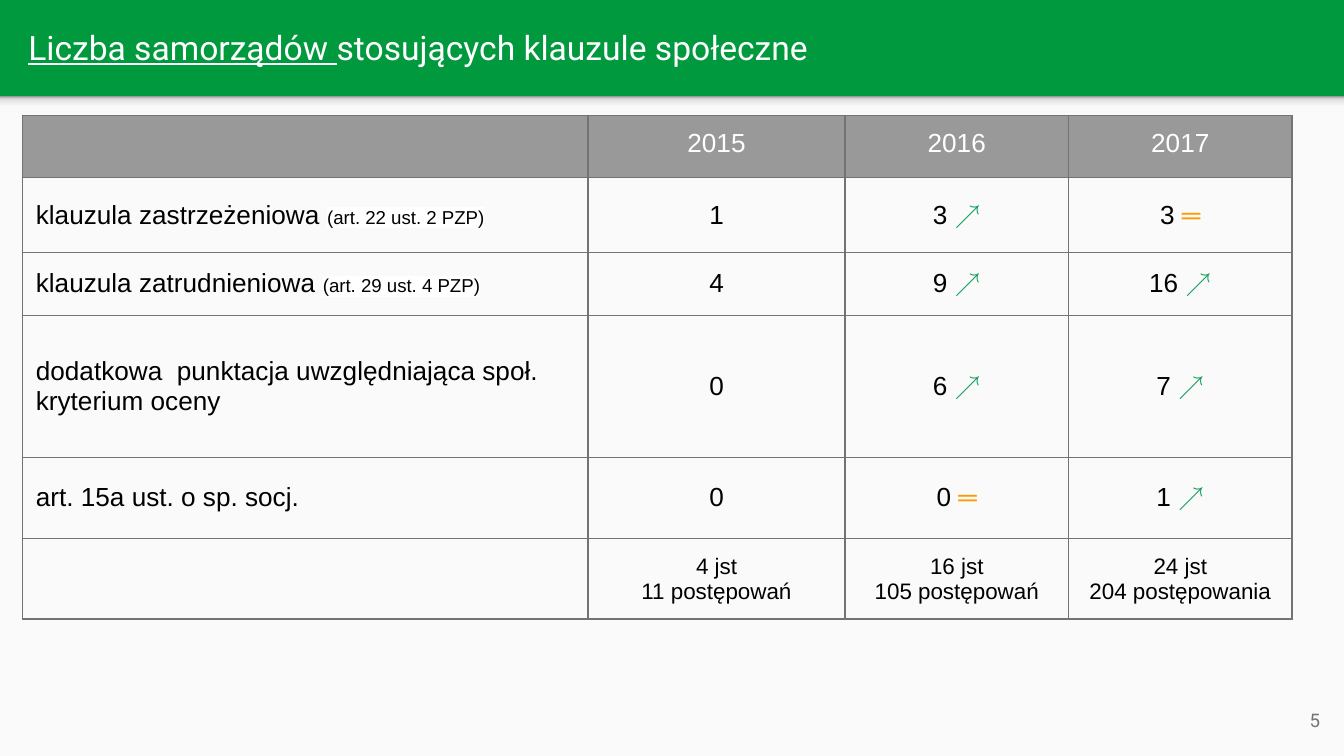
from copy import deepcopy
from dataclasses import dataclass

from lxml.etree import SubElement
from pptx import Presentation
from pptx.dml.color import RGBColor
from pptx.enum.shapes import MSO_SHAPE
from pptx.enum.text import MSO_ANCHOR, PP_ALIGN
from pptx.oxml.ns import qn
from pptx.util import Pt


@dataclass(frozen=True)
class Theme:
    green: str = "00993E"
    paper: str = "FAFAFA"
    white: str = "FFFFFF"
    black: str = "000000"
    gray: str = "737373"
    head: str = "999999"
    rise: str = "0F9D58"
    same: str = "FF9900"
    shade: tuple = ((0, "F9F9F9"), (36, "F9F9F9"), (80, "DEDEDE"), (100, "999999"))
    title: int = 18
    body: int = 14
    total: int = 12
    note: int = 10
    sans: str = "Roboto"
    plain: str = "Arial"
    inset: float = 7.2
    border: float = 0.75


class Page:
    """Holds the theme and the current slide."""

    def __init__(self, slide, theme):
        self.slide, self.theme = slide, theme
        slide.background.fill.solid()
        slide.background.fill.fore_color.rgb = RGBColor.from_string(theme.green)

    def style(self, run, size, color, face, bold=False):
        font = run.font
        font.size, font.name, font.bold = Pt(size), face, bold
        font.color.rgb = RGBColor.from_string(color)

    def pad(self, item):
        inset = Pt(self.theme.inset)
        item.margin_left = item.margin_right = inset
        item.margin_top = item.margin_bottom = inset

    def place(self, shape, box):
        shape.left, shape.top, shape.width, shape.height = map(Pt, box)

    def rect(self, box):
        shape = self.slide.shapes.add_shape(MSO_SHAPE.RECTANGLE, *map(Pt, box))
        shape.shadow.inherit = False
        shape.line.fill.background()
        return shape

    def panel(self, box, color):
        fill = self.rect(box).fill
        fill.solid()
        fill.fore_color.rgb = RGBColor.from_string(color)

    def fade(self, box, stops):
        shape = self.rect(box)
        shape.fill.gradient()
        shape.fill.gradient_angle = 90
        group = shape._element.spPr.find(qn("a:gradFill")).find(qn("a:gsLst"))
        for _ in range(len(stops) - len(group)):
            group.append(deepcopy(group[-1]))
        for stop, (spot, color) in zip(shape.fill.gradient_stops, stops):
            stop.position = spot / 100
            stop.color.rgb = RGBColor.from_string(color)

    def title(self, box, parts):
        """Fill the title; the first part is underlined."""
        shape = self.slide.shapes.title
        self.place(shape, box)
        frame = shape.text_frame
        frame.word_wrap, frame.vertical_anchor = True, MSO_ANCHOR.MIDDLE
        self.pad(frame)
        para = frame.paragraphs[0]
        para.alignment = PP_ALIGN.LEFT
        for index, part in enumerate(parts):
            run = para.add_run()
            run.text = part
            self.style(run, self.theme.title, self.theme.white, self.theme.sans)
            run.font.underline = index == 0

    def number(self, box, text):
        frame = self.slide.shapes.add_textbox(*map(Pt, box)).text_frame
        frame.word_wrap, frame.vertical_anchor = True, MSO_ANCHOR.MIDDLE
        self.pad(frame)
        frame.text = text
        para = frame.paragraphs[0]
        para.alignment = PP_ALIGN.RIGHT
        self.style(para.runs[0], self.theme.note, self.theme.gray, self.theme.sans)

    def edge(self, cell):
        props = cell._tc.get_or_add_tcPr()
        for side in ("lnL", "lnR", "lnT", "lnB"):
            line = SubElement(props, qn(f"a:{side}"), w=str(Pt(self.theme.border)))
            SubElement(SubElement(line, qn("a:solidFill")), qn("a:srgbClr"),
                       val=self.theme.gray)

    def mark(self, run):
        """Give the run a white highlight, which must follow its fill."""
        props = run._r.get_or_add_rPr()
        light = SubElement(props, qn("a:highlight"))
        SubElement(light, qn("a:srgbClr"), val=self.theme.white)
        props.find(qn("a:solidFill")).addnext(light)

    def label(self, cell, text, size, color, align):
        """Fill a cell; a trend sign or a bracketed note gets its own style."""
        theme = self.theme
        self.pad(cell)
        para = cell.text_frame.paragraphs[0]
        start = next((i for i, sign in enumerate(text) if sign in "↗═("), len(text))
        para.text = text[:start]
        para.alignment = align
        for run in para.runs:
            self.style(run, size, color, theme.plain)
        tail = text[start:]
        if not tail:
            return
        run = para.add_run()
        run.text = tail
        if tail[0] == "(":
            self.style(run, theme.note, color, theme.plain)
            self.mark(run)
        else:
            hue = theme.rise if tail == "↗" else theme.same
            self.style(run, size, hue, theme.plain, tail == "═")

    def table(self, left, top, cols, rows, data):
        theme = self.theme
        box = map(Pt, (left, top, sum(cols), sum(rows)))
        grid = self.slide.shapes.add_table(len(rows), len(cols), *box).table
        grid.first_row = grid.horz_banding = False
        for col, width in zip(grid.columns, cols):
            col.width = Pt(width)
        for row, height in zip(grid.rows, rows):
            row.height = Pt(height)
        last = len(rows) - 1
        for r, line in enumerate(data):
            size = theme.total if r == last else theme.body
            color = theme.black if r else theme.white
            for c, text in enumerate(line):
                cell = grid.cell(r, c)
                self.edge(cell)
                if r:
                    cell.fill.background()
                    cell.vertical_anchor = MSO_ANCHOR.MIDDLE
                else:
                    cell.fill.solid()
                    cell.fill.fore_color.rgb = RGBColor.from_string(theme.head)
                if text:
                    align = PP_ALIGN.CENTER if c else PP_ALIGN.LEFT
                    self.label(cell, text, size, color, align)


DATA = [
    ("", "2015", "2016", "2017"),
    ("klauzula zastrzeżeniowa (art. 22 ust. 2 PZP)", "1", "3 ↗", "3 ═"),
    ("klauzula zatrudnieniowa (art. 29 ust. 4 PZP)", "4", "9 ↗", "16 ↗"),
    ("dodatkowa  punktacja uwzględniająca społ. kryterium oceny", "0", "6 ↗", "7 ↗"),
    ("art. 15a ust. o sp. socj.", "0", "0 ═", "1 ↗"),
    ("", "4 jst\v11 postępowań", "16 jst\v105 postępowań", "24 jst\v204 postępowania"),
]


def main():
    deck = Presentation()
    deck.slide_width, deck.slide_height = Pt(720), Pt(405)
    theme = Theme()
    page = Page(deck.slides.add_slide(deck.slide_layouts[5]), theme)
    page.panel((0, 51.5, 720, 353.5), theme.paper)
    page.fade((0, 51.5, 720, 8.5), theme.shade)
    page.title((8, 1.5, 695, 47.5), ("Liczba samorządów ", "stosujących klauzule społeczne"))
    page.number((671, 370, 43.25, 31), "5")
    page.table(12, 61.75, (303, 137.75, 119.75, 119.75),
               (33.5, 40, 33.75, 76, 43.5, 41), DATA)
    deck.save("out.pptx")


if __name__ == "__main__":
    main()
